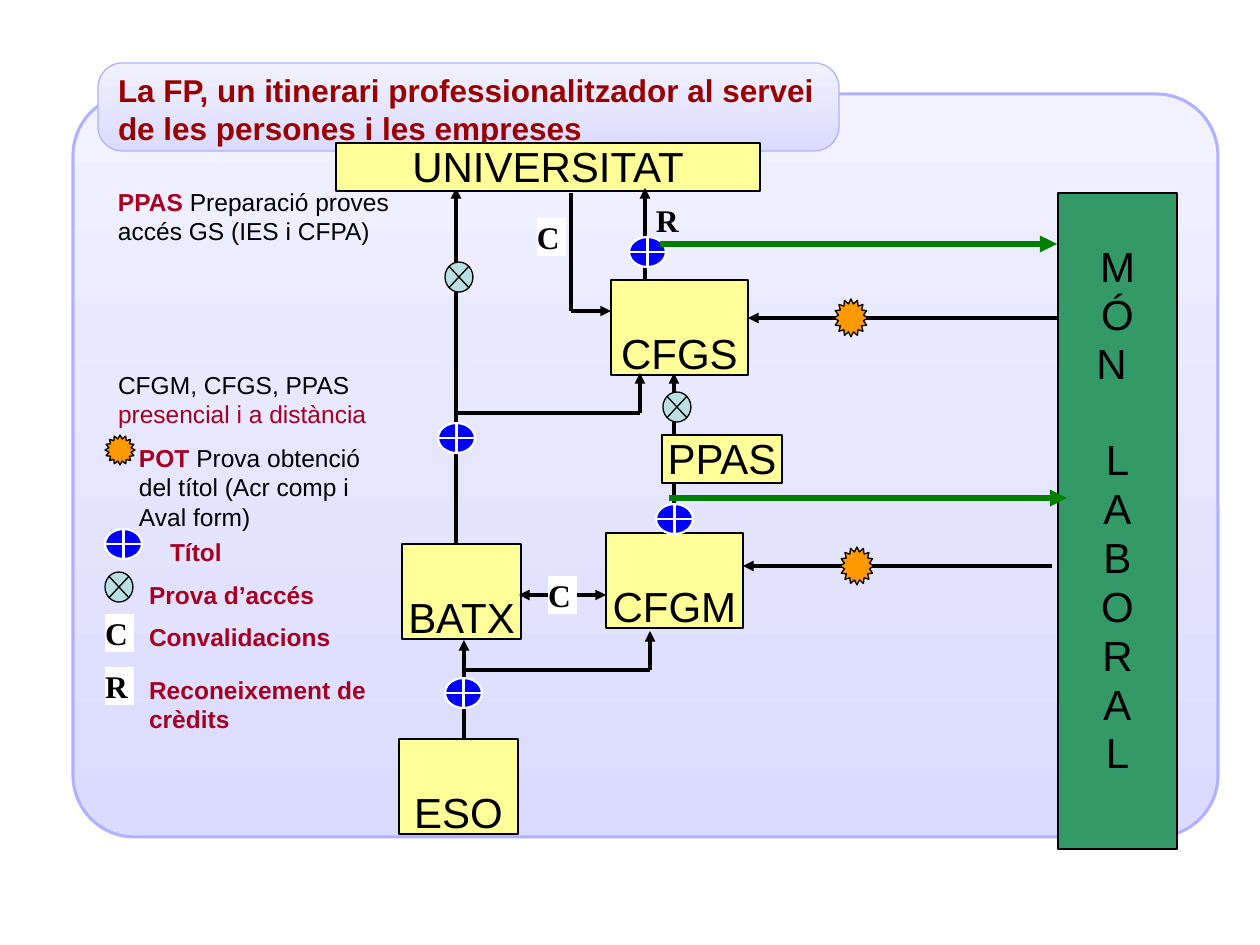
from dataclasses import dataclass
from lxml.etree import SubElement
from pptx import Presentation
from pptx.dml.color import RGBColor
from pptx.enum.shapes import MSO_CONNECTOR, MSO_SHAPE
from pptx.enum.text import MSO_ANCHOR, MSO_AUTO_SIZE, PP_ALIGN
from pptx.oxml.ns import qn
from pptx.util import Emu, Pt


@dataclass(frozen=True)
class Theme:
    """Colours, fonts and type sizes of the slide."""
    sans: str = "Arial"
    serif: str = "Times New Roman"
    big: int = 24
    head: int = 18
    small: int = 14
    black: str = "000000"
    white: str = "FFFFFF"
    title: str = "990000"
    red: str = "A50021"
    top: str = "F1F1FF"
    base: str = "DBDBFF"
    edge: str = "B1B1FF"
    stage: str = "FFFF99"
    work: str = "339966"
    green: str = "008000"
    blue: str = "0000FF"
    pale: str = "BBE0E3"
    orange: str = "FF9900"


T = Theme()
DEGREE = MSO_SHAPE.FLOWCHART_OR, T.blue, T.white, 1.25
EXAM = MSO_SHAPE.FLOWCHART_SUMMING_JUNCTION, T.pale, T.black, 0.75
POT = MSO_SHAPE.STAR_16_POINT, T.orange, T.black, 0.75


def px(*sizes):
    """Turn pixels into EMU."""
    return [Emu(round(size * 914400 / 126)) for size in sizes]


def rgb(code):
    """Read a hex colour."""
    return RGBColor.from_string(code)


def style(run, size, color, bold=False, font=T.sans):
    """Format one run."""
    run.font.size, run.font.bold, run.font.name = Pt(size), bold, font
    run.font.color.rgb = rgb(color)


def frame(shape, sides, top, bottom):
    """Set wrapping, anchor and insets of a text frame."""
    text = shape.text_frame
    text.word_wrap, text.vertical_anchor = True, MSO_ANCHOR.TOP
    text.auto_size = MSO_AUTO_SIZE.NONE
    text.margin_left, text.margin_right, text.margin_top, text.margin_bottom = px(
        sides, sides, top, bottom)
    return text


def outline(shape, color, width):
    """Set the line of a shape."""
    shape.line.color.rgb, shape.line.width = rgb(color), Pt(width)


def mark(slide, at, kind, fill, edge, width):
    """Draw a filled preset shape."""
    shape = slide.shapes.add_shape(kind, *px(*at))
    shape.shadow.inherit = False
    shape.fill.solid()
    shape.fill.fore_color.rgb = rgb(fill)
    outline(shape, edge, width)
    return shape


def panel(slide, at, round_by, width):
    """Draw a rounded panel with a vertical gradient."""
    shape = slide.shapes.add_shape(MSO_SHAPE.ROUNDED_RECTANGLE, *px(*at))
    shape.shadow.inherit = False
    shape.adjustments[0] = round_by
    shape.fill.gradient()
    shape.fill.gradient_angle = 270
    for stop, color in zip(shape.fill.gradient_stops, (T.top, T.base)):
        stop.color.rgb = rgb(color)
    outline(shape, T.edge, width)


def box(slide, at, words, drop=0, fill=T.stage):
    """Draw a box with centred lines, dropped from its top edge."""
    shape = mark(slide, at, MSO_SHAPE.RECTANGLE, fill, T.black, 0.75)
    text = frame(shape, 2, drop, 0)
    text.text = words
    for para in text.paragraphs:
        para.alignment, para.line_spacing = PP_ALIGN.CENTER, 0.97
        style(para.runs[0], T.big, T.black)
    return text


def label(slide, at, *parts):
    """Write a note from (text, colour, bold) parts."""
    text = frame(slide.shapes.add_textbox(*px(*at)), 13, 8, 6)
    for words, color, bold in parts:
        run = text.paragraphs[0].add_run()
        run.text = words
        style(run, T.small, color, bold)


def letter(slide, x, y, sign, filled=True):
    """Write a bold letter sign."""
    shape = slide.shapes.add_textbox(*px(x, y, 29, 38))
    if filled:
        shape.fill.solid()
        shape.fill.fore_color.rgb = rgb(T.white)
    text = frame(shape, 0, 0, 0)
    text.text = sign
    style(text.paragraphs[0].runs[0], T.head, T.black, True, T.serif)


def link(slide, ends, heads=("tailEnd",), color=T.black, width=2):
    """Draw a straight line with arrowheads."""
    line = slide.shapes.add_connector(MSO_CONNECTOR.STRAIGHT, *px(*ends))
    outline(line, color, width)
    for head in heads:
        SubElement(line.line._get_or_add_ln(), qn("a:" + head), type="triangle")
    SubElement(line._element.spPr, qn("a:effectLst"))


def heading(slide):
    """Place and format the title above the panels."""
    title = slide.shapes.title
    title.left, title.top, title.width, title.height = px(105, 63, 756, 88)
    text = frame(title, 13, 8, 6)
    text.text = ("La FP, un itinerari professionalitzador al servei "
                 "de les persones i les empreses")
    text.paragraphs[0].alignment = PP_ALIGN.LEFT
    style(text.paragraphs[0].runs[0], T.head, T.title, True)
    slide.shapes._spTree.append(title._element)


def legend(slide):
    """Write the notes and the key on the left."""
    label(slide, (105, 179, 328, 72), ("PPAS", T.red, True),
          (" Preparació proves accés GS (IES i CFPA)", T.black, False))
    label(slide, (105, 362, 286, 72), ("CFGM, CFGS, PPAS ", T.black, False),
          ("presencial i a distància", T.red, False))
    label(slide, (126, 435, 286, 101), ("POT", T.red, True),
          (" Prova obtenció del títol (Acr comp i Aval form)", T.black, False))
    for x, y, width, height, words in (
            (157, 529, 168, 42, "Títol"), (136, 572, 248, 42, "Prova d’accés"),
            (136, 614, 258, 42, "Convalidacions"),
            (136, 667, 248, 72, "Reconeixement de crèdits")):
        label(slide, (x, y, width, height), (words, T.red, True))


def stages(slide):
    """Draw the boxes of the study stages and the world of work."""
    for x, y, width, words in ((399, 739, 119, "ESO"), (402, 544, 119, "BATX"),
                               (606, 533, 137, "CFGM"), (611, 280, 137, "CFGS")):
        box(slide, (x, y, width, 95), words, 50)
    box(slide, (336, 143, 424, 48), "UNIVERSITAT")
    box(slide, (662, 435, 120, 48), "PPAS")
    work = box(slide, (1058, 193, 119, 656), "M\nÓ\nN \nL\nA\nB\nO\nR\nA\nL", 50, T.work)
    work.paragraphs[3].space_before = Pt(26.7)


def routes(slide):
    """Draw the links that lie over the boxes."""
    for ends in ((464, 739, 464, 640), (650, 670, 650, 631), (640, 413, 640, 373),
                 (1058, 318, 748, 318), (1052, 566, 743, 566),
                 (571, 311, 611, 311), (645, 280, 645, 188)):
        link(slide, ends)
    for ends in ((466, 670, 650, 670), (456, 413, 640, 413), (571, 193, 571, 311)):
        link(slide, ends, ())
    link(slide, (519, 595, 606, 595), ("headEnd", "tailEnd"))


def signs(slide):
    """Draw the degree, exam, star and letter signs."""
    for x, y in ((445, 678), (438, 423), (105, 529), (629, 237), (656, 504)):
        mark(slide, (x, y, 37, 30), *DEGREE)
    for x, y in ((105, 572), (445, 262), (663, 392)):
        mark(slide, (x, y, 28, 30), *EXAM)
    for at in ((834, 299, 34, 38), (840, 547, 34, 38), (105, 435, 30, 30)):
        mark(slide, at, *POT)
    for x, y, sign in ((105, 614, "C"), (548, 576, "C"), (537, 218, "C"), (105, 667, "R")):
        letter(slide, x, y, sign)
    letter(slide, 656, 201, "R", False)


def main():
    """Build the slide and save it."""
    deck = Presentation()
    deck.slide_width, deck.slide_height = px(1260, 945)
    slide = deck.slides.add_slide(deck.slide_layouts[5])
    panel(slide, (73, 94, 1145, 743), 0.083, 1.75)
    panel(slide, (98, 63, 741, 88), 0.279, 0.75)
    heading(slide)
    for ends in ((456, 547, 456, 188), (674, 534, 674, 373)):
        link(slide, ends)
    stages(slide)
    legend(slide)
    routes(slide)
    signs(slide)
    for ends in ((660, 244, 1057, 244), (669, 498, 1067, 498)):
        link(slide, ends, color=T.green, width=3.25)
    deck.save("out.pptx")


if __name__ == "__main__":
    main()
